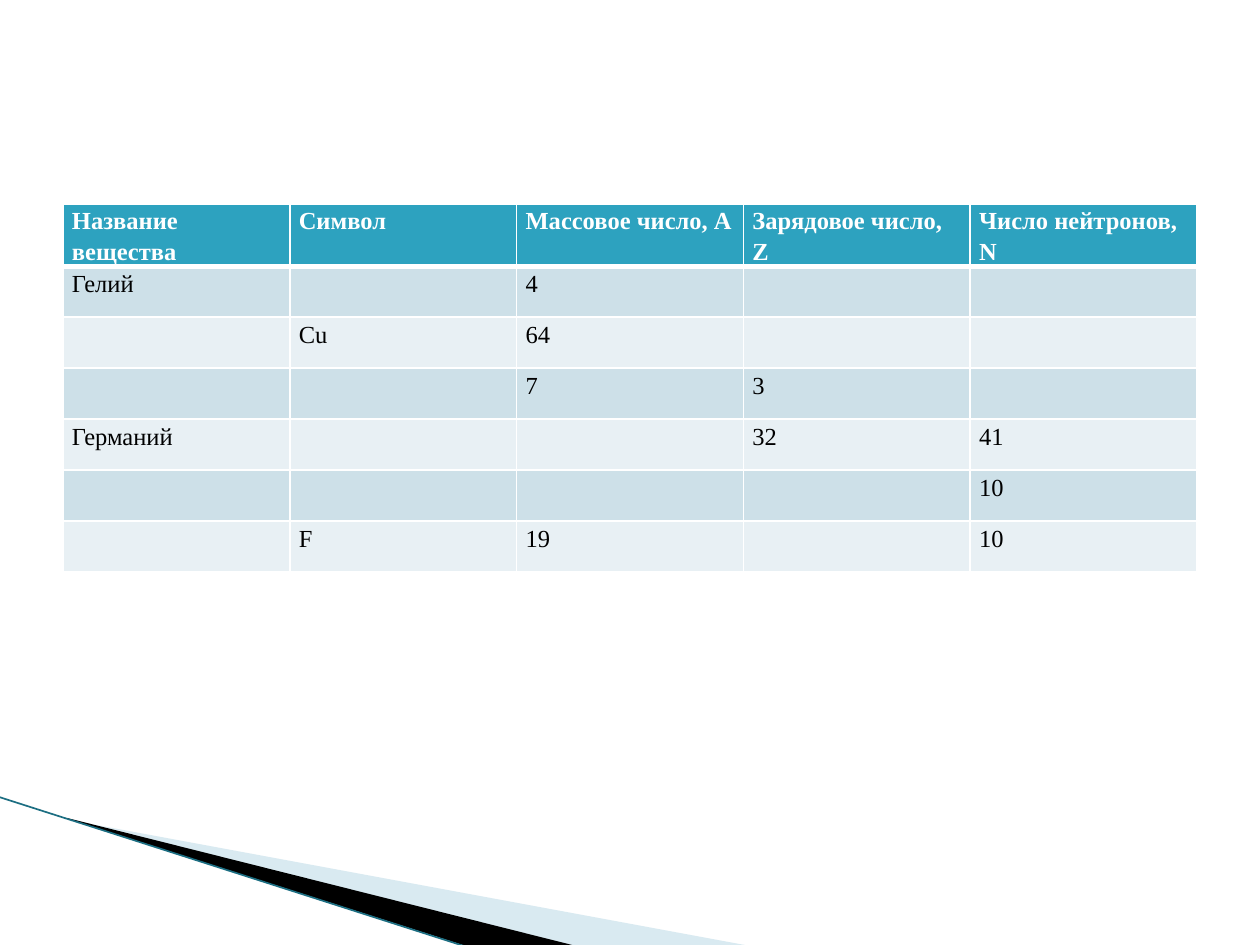
from lxml import etree
from pptx import Presentation
from pptx.dml.color import RGBColor
from pptx.enum.shapes import MSO_CONNECTOR
from pptx.oxml.ns import qn
from pptx.util import Pt

STRAIGHT = MSO_CONNECTOR.STRAIGHT
SCALE = 914400 / 126  # EMU in one px
FONT = "Times New Roman"
COLORS = {
    "white": "FFFFFF",
    "black": "000000",
    "header": "2DA2BF",
    "band_dark": "CDE0E8",
    "band_light": "E8F0F4",
    "wedge": "A0CBDC",
    "edge": "1C6E82",
}
ROWS = [
    ["Название вещества", "Символ", "Массовое число, A", "Зарядовое число, Z", "Число нейтронов, N"],
    ["Гелий", "", "4", "", ""],
    ["", "Cu", "64", "", ""],
    ["", "", "7", "3", ""],
    ["Германий", "", "", "32", "41"],
    ["", "", "", "", "10"],
    ["", "F", "19", "", "10"],
]


def px(length):
    return round(length * SCALE)


def color(name):
    return RGBColor.from_string(COLORS[name])


def write_text(text_frame, text, size=14, bold=False, ink="black", spacing=1.15):
    paragraph = text_frame.paragraphs[0]
    paragraph.line_spacing = spacing
    paragraph.font.size = Pt(size)
    if text:
        run = paragraph.add_run()
        run.text = text
        run.font.name = FONT
        run.font.size = Pt(size)
        run.font.bold = bold
        run.font.color.rgb = color(ink)


def set_borders(cell, widths):
    properties = cell._tc.get_or_add_tcPr()
    for index, (side, width) in enumerate(widths.items()):
        line = etree.Element(qn(f"a:{side}"), w=str(Pt(width)))
        fill = etree.SubElement(line, qn("a:solidFill"))
        etree.SubElement(fill, qn("a:srgbClr"), val=COLORS["white"])
        properties.insert(index, line)


def set_frame(shape, points, left, top, width, height):
    """Give a freeform a frame of its own, which its outline may overrun."""
    shift_x = min(x for x, _ in points) - left
    shift_y = min(y for _, y in points) - top
    for outline in shape._element.iter(qn("a:path")):
        outline.set("w", str(width))
        outline.set("h", str(height))
        for point in outline.iter(qn("a:pt")):
            point.set("x", str(int(point.get("x")) + shift_x))
            point.set("y", str(int(point.get("y")) + shift_y))
    shape.left, shape.top = px(left), px(top)
    shape.width, shape.height = px(width), px(height)


def add_wedge(slide, points, frame, fill, opacity=100):
    builder = slide.shapes.build_freeform(*points[0], scale=SCALE)
    builder.add_line_segments(points[1:], close=True)
    shape = builder.convert_to_shape()
    set_frame(shape, points, *frame)
    shape.shadow.inherit = False
    shape.fill.solid()
    shape.fill.fore_color.rgb = color(fill)
    shape.line.fill.background()
    if opacity < 100:
        for element in shape.fill._xPr.iter(qn("a:srgbClr")):
            etree.SubElement(element, qn("a:alpha"), val=str(opacity * 1000))


def add_corner_decoration(slide, left, top):
    def place(*points):
        return [(left + x, top + y) for x, y in points]

    # Pale and black wedges
    add_wedge(slide, place((69, 23), (750, 149), (575, 149), (69, 22)),
              (left + 98, top - 108, 524, 199), "wedge", 40)
    add_wedge(slide, place((67, 21), (576, 149), (469, 150), (68, 22)),
              (left - 8, top, 524, 116), "black")

    # Diagonal edge line
    (x1, y1), (x2, y2) = place((-1, 0), (467, 150))
    edge = slide.shapes.add_connector(STRAIGHT, px(x1), px(y1), px(x2), px(y2))
    edge.line.color.rgb = color("edge")
    edge.line.width = Pt(0.95)
    etree.SubElement(edge._element.spPr, qn("a:effectLst"))


def add_element_table(slide, left, top, width, header_height, row_height):
    height = header_height + row_height * (len(ROWS) - 1)
    frame = slide.shapes.add_table(
        len(ROWS), len(ROWS[0]), px(left), px(top), px(width), px(height))
    table = frame.table
    for column in table.columns:
        column.width = px(width / len(ROWS[0]))
    for row_index, texts in enumerate(ROWS):
        header = row_index == 0
        table.rows[row_index].height = px(header_height if header else row_height)
        band = "header" if header else ("band_light", "band_dark")[row_index % 2]
        borders = {"lnL": 1, "lnR": 1, "lnT": 3 if row_index == 1 else 1, "lnB": 3 if header else 1}
        for column_index, text in enumerate(texts):
            cell = table.cell(row_index, column_index)
            cell.margin_left = cell.margin_right = px(9)
            cell.margin_top = cell.margin_bottom = 0
            cell.fill.solid()
            cell.fill.fore_color.rgb = color(band)
            set_borders(cell, borders)
            write_text(cell.text_frame, text, bold=header, ink="white" if header else "black")


def main():
    presentation = Presentation()
    presentation.slide_width = px(1260)
    presentation.slide_height = px(945)
    slide = presentation.slides.add_slide(presentation.slide_layouts[6])
    add_corner_decoration(slide, 0, 797)
    add_element_table(slide, 63, 204, 1134, 61, 51)
    presentation.save("out.pptx")


if __name__ == "__main__":
    main()
